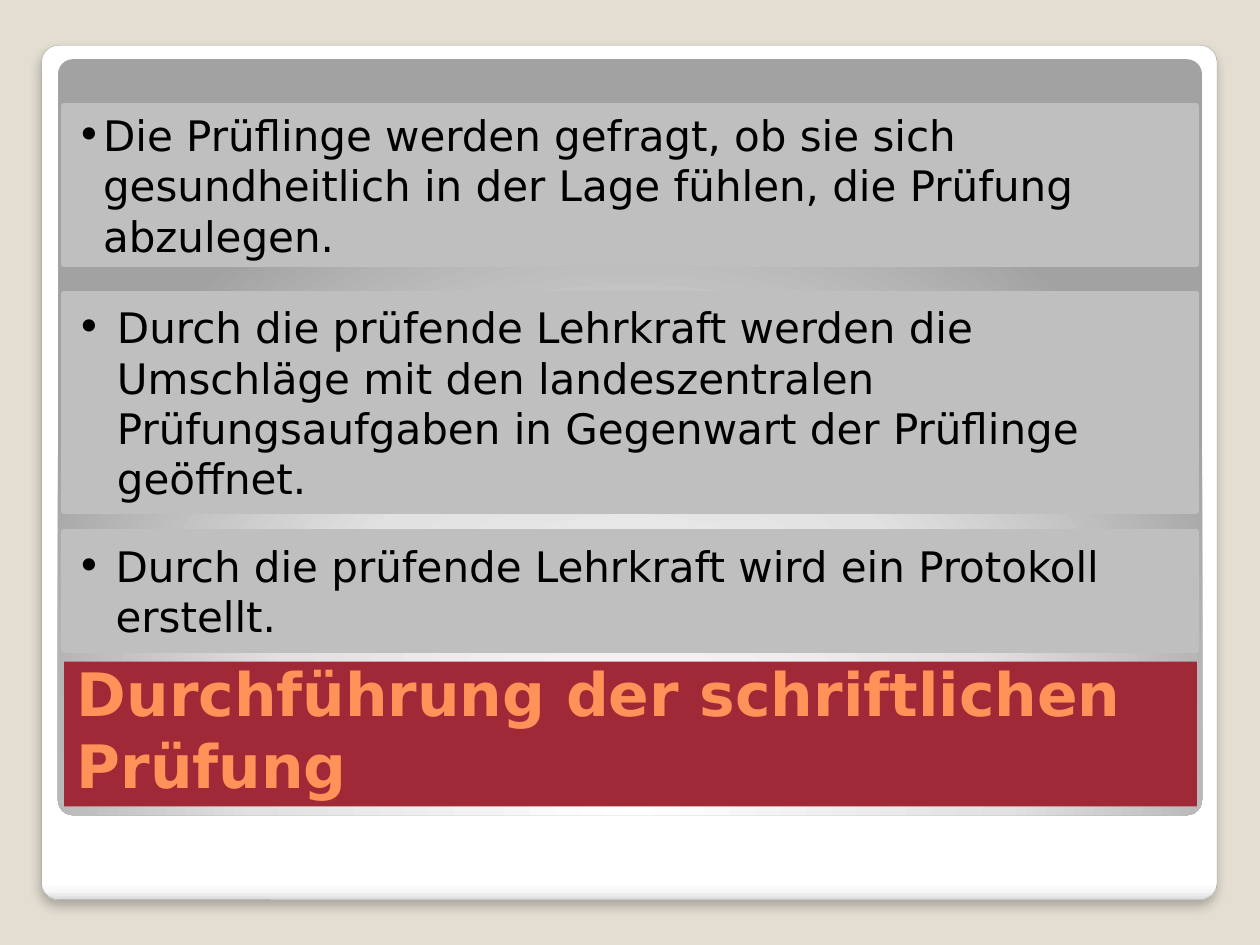
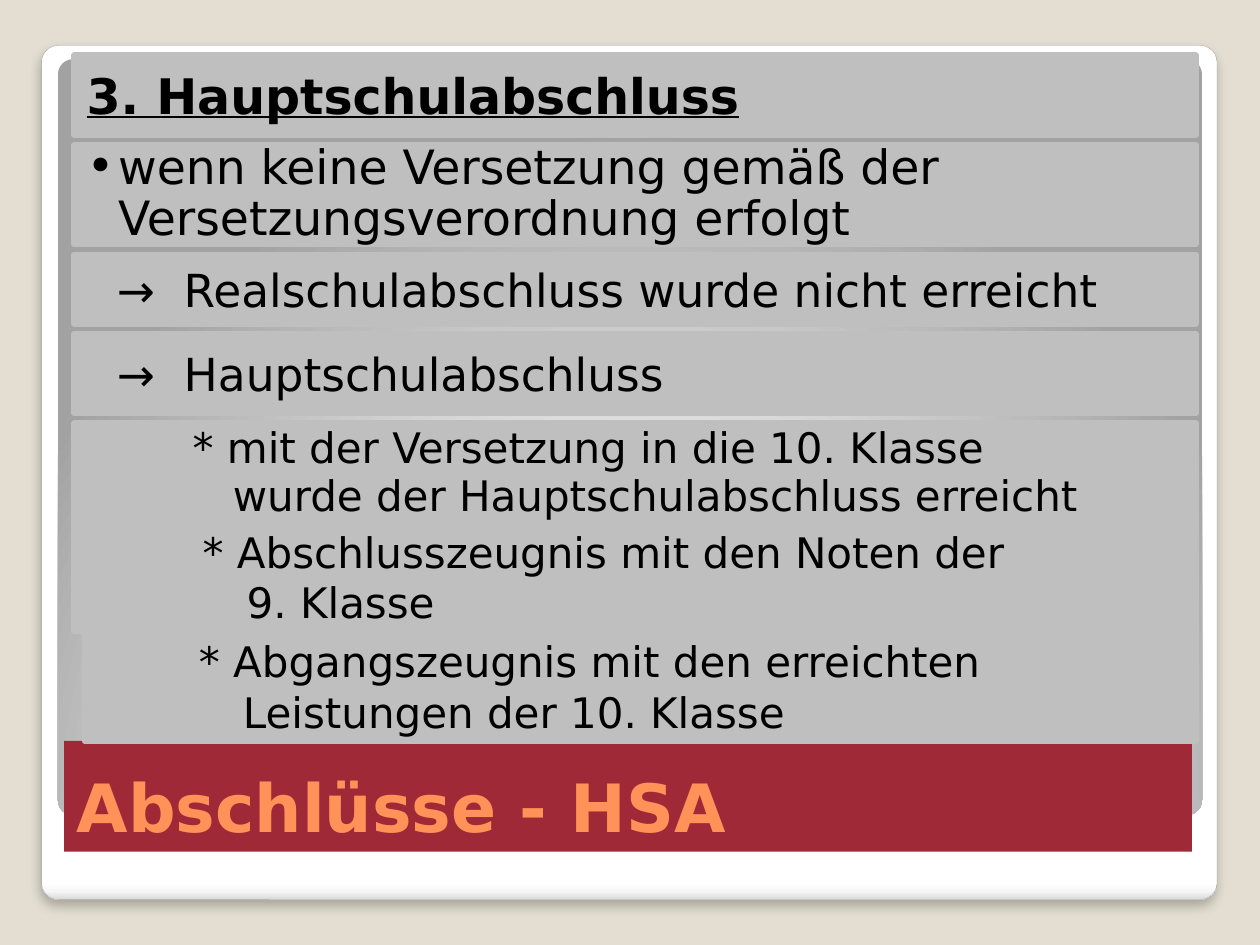
from dataclasses import dataclass

from lxml import etree
from pptx import Presentation
from pptx.dml.color import RGBColor
from pptx.enum.shapes import MSO_SHAPE
from pptx.enum.text import MSO_ANCHOR, MSO_AUTO_SIZE, PP_ALIGN
from pptx.oxml.ns import qn
from pptx.util import Inches, Pt

RECTANGLE = MSO_SHAPE.RECTANGLE
ROUNDED = MSO_SHAPE.ROUNDED_RECTANGLE
MIDDLE, BOTTOM = MSO_ANCHOR.MIDDLE, MSO_ANCHOR.BOTTOM
LEFT = PP_ALIGN.LEFT
NO_AUTOFIT = MSO_AUTO_SIZE.NONE

FONT = "DejaVu Sans"
BACKDROP, CARD_EDGE = "E3DED1", "A4A4A4"
TITLE_BAND, TITLE_TEXT = "9F2936", "FF9258"
BAR, BLACK = "BFBFBF", "000000"
CARD_STOPS = [(0, "FFFFFF"), (98, "FFFFFF"), (99, "F7F7F7"), (100, "DADADA")]
PANEL_STOPS = [(0, "FFFFFF"), (55, "E1E1E1"), (100, "A2A2A2")]


@dataclass
class Bar:
    """One grey text bar: its box, wording, and indents in inches."""
    box: tuple
    text: str
    size: float = 24
    margin: float = 0
    hang: float = 0
    bullet: str = ""
    heading: bool = False
    spacing: float = 1.0


PROCEDURE_BARS = [
    Bar((0.51, 2.33, 8.98, 1.73),
        "Durch die prüfende Lehrkraft werden die\vUmschläge mit den landeszentralen\v"
        "Prüfungsaufgaben in Gegenwart der Prüflinge\vgeöffnet.",
        margin=0.32, hang=0.32, bullet="•"),
    Bar((0.51, 0.84, 8.98, 1.26),
        "Die Prüflinge werden gefragt, ob sie sich\v"
        "gesundheitlich in der Lage fühlen, die Prüfung\vabzulegen.",
        margin=0.21, hang=0.21, bullet="•"),
    Bar((0.51, 4.22, 8.98, 0.94),
        "Durch die prüfende Lehrkraft wird ein Protokoll\verstellt.",
        margin=0.31, hang=0.31, bullet="•"),
]

CERTIFICATE_BARS = [
    Bar((0.59, 0.44, 8.9, 0.63), "3. Hauptschulabschluss", 28, heading=True),
    Bar((0.59, 2.02, 8.9, 0.55), "→\tRealschulabschluss wurde nicht erreicht",
        26, 0.77, 0.53),
    Bar((0.59, 1.15, 8.9, 0.79),
        "wenn keine Versetzung gemäß der\vVersetzungsverordnung erfolgt",
        27, 0.25, 0.25, "•", spacing=0.9),
    Bar((0.59, 2.65, 8.9, 0.63), "→\tHauptschulabschluss", 26, 0.77, 0.53),
    Bar((0.67, 5.01, 8.82, 0.87),
        "* Abgangszeugnis mit den erreichten\vLeistungen der 10. Klasse",
        margin=1.16, hang=0.35),
    Bar((0.59, 4.14, 8.9, 0.87),
        "* Abschlusszeugnis mit den Noten der\v9. Klasse",
        margin=1.27, hang=0.35),
    Bar((0.59, 3.36, 8.9, 0.79),
        "* mit der Versetzung in die 10. Klasse\vwurde der Hauptschulabschluss erreicht",
        margin=1.16, hang=0.32, spacing=0.94),
]


def color(value):
    """Turn a hex string into a colour."""
    return RGBColor.from_string(value)


def add_node(parent, tag, **attributes):
    """Append a DrawingML element with the given attributes."""
    node = etree.SubElement(parent, qn(tag))
    for name, value in attributes.items():
        node.set(name, str(value))
    return node


def add_box(slide, kind, box):
    """Add a shadowless shape at a box given in inches."""
    shape = slide.shapes.add_shape(kind, *map(Inches, box))
    shape.shadow.inherit = False
    return shape


def fill_gradient(shape, stops):
    """Give the shape gradient stops and return the gradient element."""
    gradient = etree.Element(qn("a:gradFill"), rotWithShape="1")
    stop_list = add_node(gradient, "a:gsLst")
    for percent, value in stops:
        stop = add_node(stop_list, "a:gs", pos=percent * 1000)
        add_node(stop, "a:srgbClr", val=value)
    shape.element.spPr.find(qn("a:prstGeom")).addnext(gradient)
    return gradient


def add_card(slide):
    """Add the white card with its fine edge and soft shadow."""
    card = add_box(slide, ROUNDED, (0.33, 0.36, 9.33, 6.78))
    card.adjustments[0] = 0.02
    card.line.color.rgb = color(CARD_EDGE)
    card.line.width = Pt(0.16)
    add_node(fill_gradient(card, CARD_STOPS), "a:lin", ang=5400000, scaled=0)
    effects = card.element.spPr.find(qn("a:effectLst"))
    shadow = add_node(effects, "a:outerShdw", blurRad=Pt(6), dist=Pt(4),
                      dir=5400000, algn="t", rotWithShape=0)
    add_node(add_node(shadow, "a:srgbClr", val=BLACK), "a:alpha", val=25000)
    return card


def add_panel(slide):
    """Add the grey panel that is lit from below."""
    panel = add_box(slide, ROUNDED, (0.46, 0.47, 9.08, 6))
    panel.adjustments[0] = 0.02
    panel.line.fill.background()
    circle = add_node(fill_gradient(panel, PANEL_STOPS), "a:path", path="circle")
    add_node(circle, "a:fillToRect", l=50000, t=175000, r=50000, b=-75000)
    return panel


def prepare_layout(layout, slide):
    """Put the shared backdrop, card and panel on the layout."""
    layout.background.fill.solid()
    layout.background.fill.fore_color.rgb = color(BACKDROP)
    for holder in list(layout.placeholders)[1:]:
        layout.shapes.element.remove(holder.element)
    for position, shape in enumerate([add_card(slide), add_panel(slide)], start=2):
        layout.shapes.element.insert(position, shape.element)


def style_runs(para, size, value, bold=False, underline=False):
    """Format every run of a left-aligned paragraph."""
    para.alignment = LEFT
    for span in para.runs:
        span.font.name = FONT
        span.font.size = Pt(size)
        span.font.color.rgb = color(value)
        span.font.bold = bold
        span.font.underline = underline


def set_title(slide, text, size, box):
    """Fill the title placeholder as a red band."""
    title = slide.shapes.title
    title.left, title.top, title.width, title.height = map(Inches, box)
    title.fill.solid()
    title.fill.fore_color.rgb = color(TITLE_BAND)
    frame = title.text_frame
    frame.text = text
    frame.word_wrap = True
    frame.auto_size = NO_AUTOFIT
    frame.vertical_anchor = BOTTOM
    frame.margin_top, frame.margin_bottom = 0, Inches(0.05)
    style_runs(frame.paragraphs[0], size, TITLE_TEXT, bold=True)


def add_bar(slide, bar):
    """Add one grey bar with its indented text."""
    shape = add_box(slide, RECTANGLE, bar.box)
    shape.fill.solid()
    shape.fill.fore_color.rgb = color(BAR)
    shape.line.color.rgb = color(BAR)
    shape.line.width = Pt(3.35)
    frame = shape.text_frame
    frame.word_wrap = True
    frame.vertical_anchor = MIDDLE
    frame.margin_top = frame.margin_bottom = 0
    para = frame.paragraphs[0]
    para.text = bar.text
    para.line_spacing = bar.spacing
    style_runs(para, bar.size, BLACK, bar.heading, bar.heading)
    properties = para._p.get_or_add_pPr()
    properties.set("marL", str(Inches(bar.margin)))
    properties.set("indent", str(-Inches(bar.hang)))
    if bar.bullet:
        add_node(properties, "a:buFont", typeface=FONT)
        add_node(properties, "a:buChar", char=bar.bullet)


def fill_slide(slide, title, size, title_box, bars):
    """Build a slide from its title band and text bars."""
    set_title(slide, title, size, title_box)
    for bar in bars:
        add_bar(slide, bar)


def main():
    """Build and save the deck."""
    deck = Presentation()
    deck.slide_width, deck.slide_height = Inches(10), Inches(7.5)
    layout = deck.slide_layouts.get_by_name("Title Only")
    procedure = deck.slides.add_slide(layout)
    prepare_layout(layout, procedure)
    fill_slide(procedure, "Durchführung der schriftlichen Prüfung", 34.2,
               (0.51, 5.25, 8.99, 1.15), PROCEDURE_BARS)
    certificate = deck.slides.add_slide(layout)
    fill_slide(certificate, "Abschlüsse - HSA", 38,
               (0.51, 5.88, 8.95, 0.88), CERTIFICATE_BARS)
    deck.save("out.pptx")


if __name__ == "__main__":
    main()
